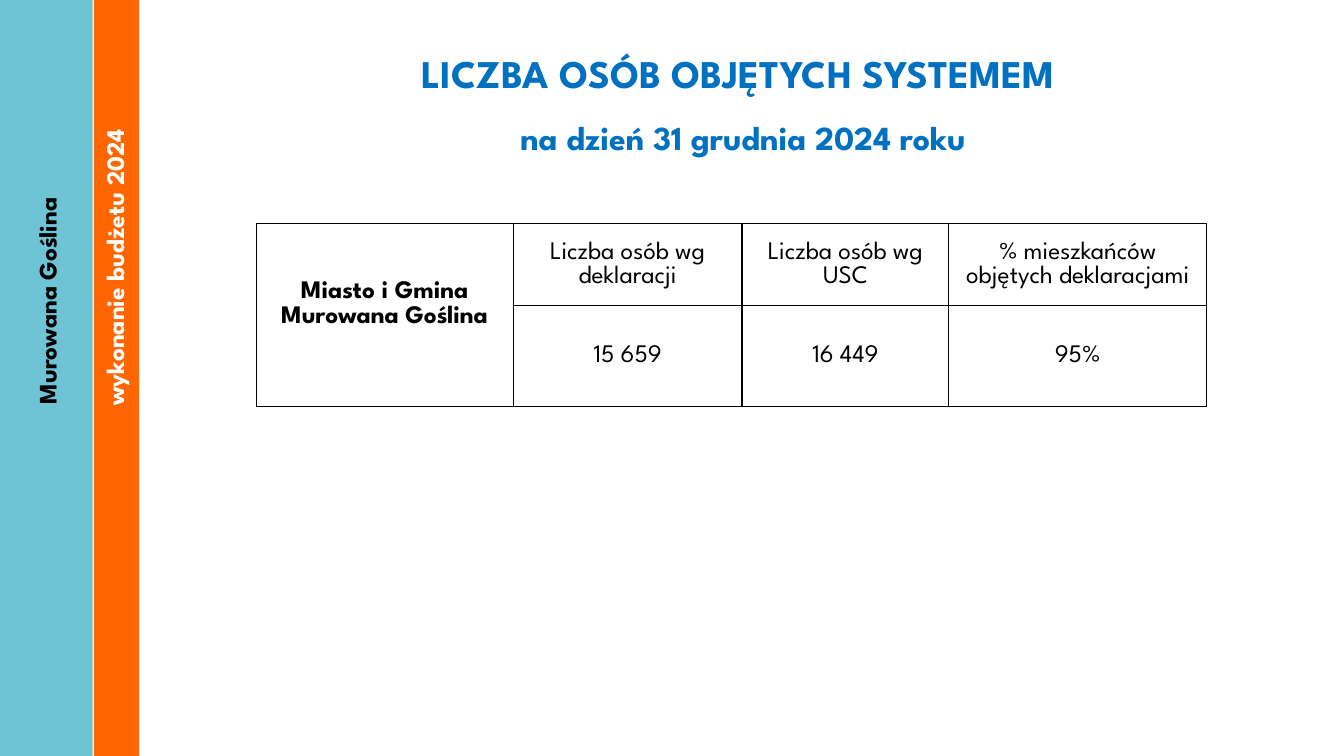
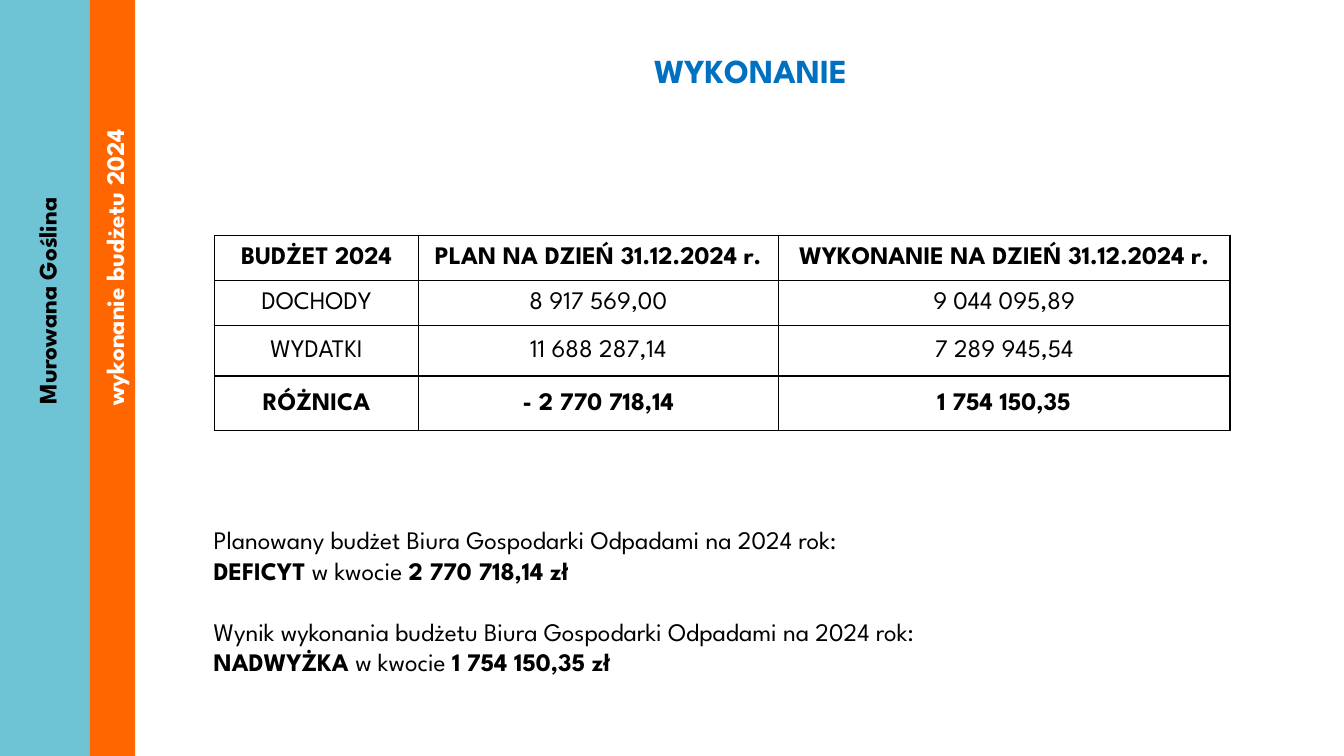
from lxml import etree
from pptx import Presentation
from pptx.dml.color import RGBColor
from pptx.enum.shapes import MSO_SHAPE
from pptx.enum.text import MSO_ANCHOR, PP_ALIGN
from pptx.oxml.ns import qn
from pptx.util import Inches, Pt

RECT = MSO_SHAPE.RECTANGLE
TOP, MIDDLE = MSO_ANCHOR.TOP, MSO_ANCHOR.MIDDLE
LEFT, CENTER = PP_ALIGN.LEFT, PP_ALIGN.CENTER

SLIDE_W, SLIDE_H = 13.33, 7.5
FONT = "League Spartan"
BODY_SIZE = 18
LINE = 1.21  # line height per point of text size
TABLE_LINE = 0.99
TEAL, ORANGE, BLUE = "6EC4D5", "FF6600", "0070C0"
BLACK, WHITE = "000000", "FFFFFF"
TEAL_W, ORANGE_W = 0.92, 0.45


def rgb(color):
    return RGBColor.from_string(color)


def write(tf, paragraphs, size=BODY_SIZE, color=BLACK, bold=False, align=LEFT,
          line=LINE, before=()):
    """Fill a text frame; a paragraph is a string or a list of (text, bold) runs.

    before maps a paragraph's index to its space before, in points.
    """
    gaps = dict(before)
    for i, runs in enumerate(paragraphs):
        p = tf.paragraphs[0] if i == 0 else tf.add_paragraph()
        p.alignment = align
        p.line_spacing = Pt(round(size * line, 1))
        if i in gaps:
            p.space_before = Pt(gaps[i])
        if isinstance(runs, str):
            runs = [(runs, bold)]
        for text, is_bold in runs:
            r = p.add_run()
            r.text = text
            r.font.name = FONT
            r.font.size = Pt(size)
            r.font.bold = is_bold
            r.font.color.rgb = rgb(color)


def add_text(s, box, paragraphs, anchor=TOP, rotation=0, **style):
    sp = s.shapes.add_textbox(*map(Inches, box))
    sp.rotation = rotation
    tf = sp.text_frame
    tf.word_wrap = True
    tf.vertical_anchor = anchor
    write(tf, paragraphs, **style)
    return tf


def add_band(s, left, width, color):
    sp = s.shapes.add_shape(RECT, *map(Inches, (left, 0, width, SLIDE_H)))
    sp.shadow.inherit = False
    sp.fill.solid()
    sp.fill.fore_color.rgb = rgb(color)
    sp.line.fill.background()


def add_side_label(s, center_x, bottom, length, text, **style):
    """Place text that reads upwards from the given bottom edge."""
    height = 0.4
    box = (center_x - length / 2, bottom - length / 2 - height / 2, length, height)
    add_text(s, box, [text], rotation=270, bold=True, **style)


def add_frame(prs, orange_left):
    s = prs.slides.add_slide(prs.slide_layouts[6])
    add_band(s, 0, TEAL_W, TEAL)
    add_side_label(s, TEAL_W / 2, 4.11, 2.52, "Murowana Goślina")
    add_band(s, orange_left, ORANGE_W, ORANGE)
    add_side_label(s, 1.13, 4.12, 3.9, "wykonanie budżetu 2024",
                   color=WHITE, anchor=MIDDLE)
    return s


def add_borders(cell, width=1):
    tc_pr = cell._tc.get_or_add_tcPr()
    for i, side in enumerate(("a:lnL", "a:lnR", "a:lnT", "a:lnB")):
        ln = etree.Element(qn(side), w=str(Pt(width)))
        fill = etree.SubElement(ln, qn("a:solidFill"))
        etree.SubElement(fill, qn("a:srgbClr"), val=BLACK)
        tc_pr.insert(i, ln)


def add_grid(s, left, top, widths, heights, rows, bold_cells):
    box = (left, top, sum(widths), sum(heights))
    table = s.shapes.add_table(len(heights), len(widths),
                               *map(Inches, box)).table
    table.first_row = table.horz_banding = False
    for col, width in zip(table.columns, widths):
        col.width = Inches(width)
    for row, height in zip(table.rows, heights):
        row.height = Inches(height)
    for i, texts in enumerate(rows):
        for j, text in enumerate(texts):
            cell = table.cell(i, j)
            cell.fill.background()
            cell.vertical_anchor = MIDDLE
            cell.margin_left = cell.margin_right = Inches(0.07)
            cell.margin_top = cell.margin_bottom = 0
            add_borders(cell)
            if text:
                write(cell.text_frame, [text], bold=(i, j) in bold_cells,
                      align=CENTER, line=TABLE_LINE)
    return table


def people_slide(prs):
    s = add_frame(prs, 0.93)
    left, width = 2.24, 10.26
    tf = add_text(s, (left, 0.2, width, 1.5), ["LICZBA OSÓB OBJĘTYCH SYSTEMEM "],
                  size=28, color=BLUE, bold=True, align=CENTER, line=1.5 * LINE)
    p = tf.add_paragraph()
    p.alignment = CENTER
    p.line_spacing = Pt(43.6)
    r = p.add_run()
    r.text = "na dzień 31 grudnia 2024 roku"
    r.font.name, r.font.size, r.font.bold = FONT, Pt(24), True
    r.font.color.rgb = rgb(BLUE)

    rows = [
        ["Miasto i Gmina Murowana Goślina", "Liczba osób wg deklaracji",
         "Liczba osób wg USC", "% mieszkańców objętych deklaracjami"],
        ["", "15 659", "16 449", "95%"],
    ]
    table = add_grid(s, 2.54, 2.22, [2.55, 2.27, 2.05, 2.56], [0.81, 1],
                     rows, {(0, 0)})
    place = table.cell(0, 0)
    place.merge(table.cell(1, 0))
    place.margin_left = place.margin_right = Inches(0.1)
    place.margin_bottom = Inches(0.22)


def result_slide(prs):
    s = add_frame(prs, 0.89)
    add_text(s, (3.63, 0.44, 7.63, 0.5), ["WYKONANIE"], size=24, color=BLUE,
             bold=True, align=CENTER)
    rows = [
        ["BUDŻET 2024", "PLAN NA DZIEŃ 31.12.2024 r.",
         "WYKONANIE NA DZIEŃ 31.12.2024 r."],
        ["DOCHODY", "8 917 569,00", "9 044 095,89"],
        ["WYDATKI", "11 688 287,14", "7 289 945,54"],
        ["RÓŻNICA", "- 2 770 718,14", "1 754 150,35"],
    ]
    bold_cells = {(i, j) for i in (0, 3) for j in range(3)}
    add_grid(s, 2.13, 2.34, [2.02, 3.57, 4.48], [0.44, 0.45, 0.5, 0.54],
             rows, bold_cells)
    notes = [
        "Planowany budżet Biura Gospodarki Odpadami na 2024 rok:",
        [("DEFICYT", True), (" w kwocie ", False), ("2 770 718,14 zł", True)],
        "Wynik wykonania budżetu Biura Gospodarki Odpadami na 2024 rok:",
        [("NADWYŻKA", True), (" w kwocie ", False), ("1 754 150,35 zł", True)],
    ]
    add_text(s, (2.02, 5.15, 10.42, 1.61), notes, before={2: 21.8})


def main():
    prs = Presentation()
    prs.slide_width, prs.slide_height = Inches(SLIDE_W), Inches(SLIDE_H)
    people_slide(prs)
    result_slide(prs)
    prs.save("out.pptx")


if __name__ == "__main__":
    main()
